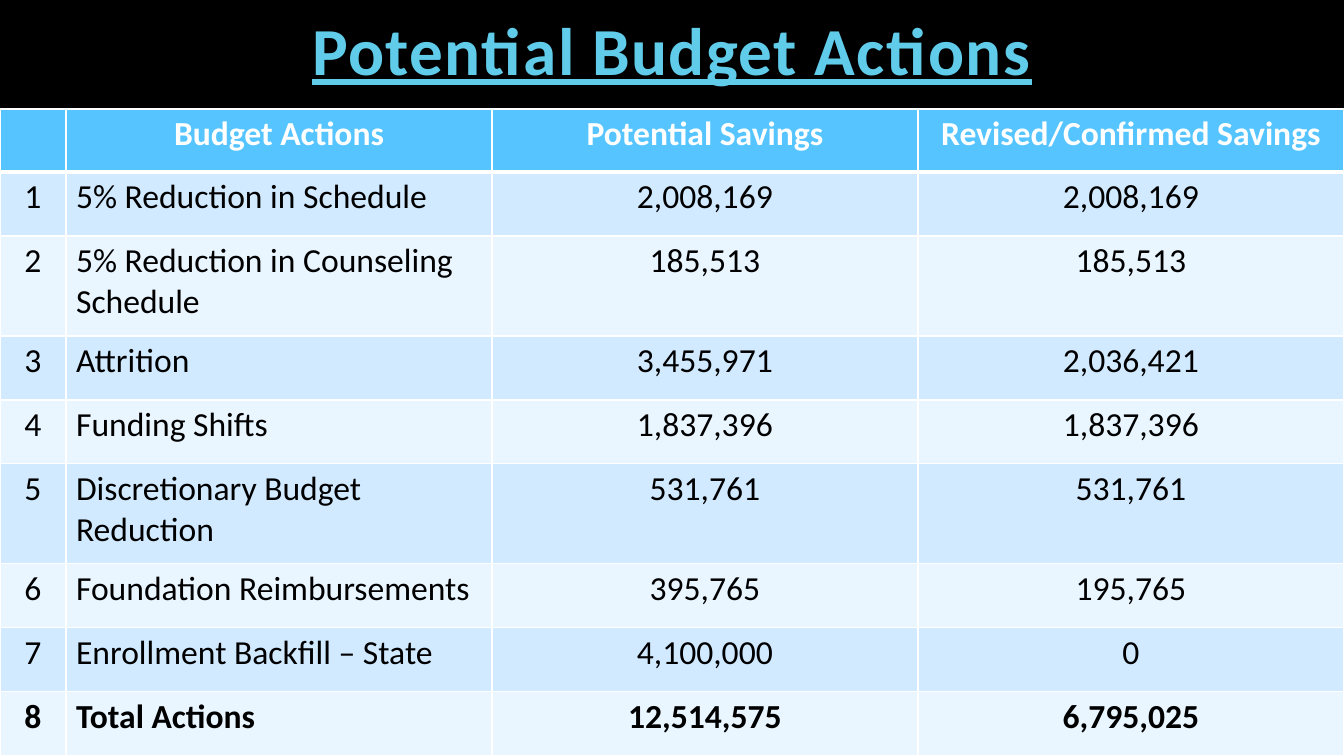
from dataclasses import dataclass

from lxml import etree
from pptx import Presentation
from pptx import util as u
from pptx.dml.color import RGBColor
from pptx.enum import text
from pptx.oxml import ns

SCALE = 12192000 / 1344
MID, LEFT = text.PP_ALIGN.CENTER, text.PP_ALIGN.LEFT


@dataclass(frozen=True)
class Theme:
    """Colours, font and type sizes of the slide."""
    back: str = "000000"
    title: str = "60CCEA"
    head: str = "56C5FF"
    odd: str = "D1EAFF"
    even: str = "E9F5FF"
    ink: str = "000000"
    white: str = "FFFFFF"
    face: str = "Calibri"
    big: int = 48
    body: int = 24


LOOK = Theme()
COLS = [66, 426, 426, 426]
HEAD, LINE, TALL = 63, 64, 100
HEADS = ("", "Budget Actions", "Potential Savings", "Revised/Confirmed Savings")
ACTIONS = [
    ("5% Reduction in Schedule", 2008169, 2008169, LINE),
    ("5% Reduction in Counseling Schedule", 185513, 185513, TALL),
    ("Attrition", 3455971, 2036421, LINE),
    ("Funding Shifts", 1837396, 1837396, LINE),
    ("Discretionary Budget Reduction", 531761, 531761, TALL),
    ("Foundation Reimbursements", 395765, 195765, LINE),
    ("Enrollment Backfill – State", 4100000, 0, LINE),
    ("Total Actions", 12514575, 6795025, LINE),
]


def px(num):
    """Turn pixels into EMU."""
    return u.Emu(round(num * SCALE))


def style(para, size, color, bold, align):
    """Set the font and alignment of a paragraph."""
    para.alignment = align
    font = para.font
    font.name, font.size, font.bold = LOOK.face, u.Pt(size), bold
    font.color.rgb = RGBColor.from_string(color)
    return font


def add_title(slide, words):
    """Add the underlined title, resting on the bottom of its box."""
    frame = slide.shapes.add_textbox(px(109), px(37), px(1126), px(58)).text_frame
    frame.word_wrap = True
    frame.vertical_anchor = text.MSO_ANCHOR.BOTTOM
    para = frame.paragraphs[0]
    para.text = words
    para.line_spacing = 0.9
    font = style(para, LOOK.big, LOOK.title, True, MID)
    font.underline = True
    font._rPr.set("spc", "100")


def edge(cell, side, width):
    """Draw one white side of a cell."""
    props = cell._tc.get_or_add_tcPr()
    line = etree.SubElement(props, ns.qn(f"a:ln{side}"), w=str(u.Pt(width)))
    fill = etree.SubElement(line, ns.qn("a:solidFill"))
    etree.SubElement(fill, ns.qn("a:srgbClr"), val=LOOK.white)


def fill_cell(cell, words, row, col, last):
    """Write one cell with its borders, fill and font."""
    head = row == 0
    thick = {"T": row == 1, "B": head}
    for side in "LRTB":
        edge(cell, side, 3 if thick.get(side) else 1)
    shade = LOOK.head if head else LOOK.odd if row % 2 else LOOK.even
    cell.fill.solid()
    cell.fill.fore_color.rgb = RGBColor.from_string(shade)
    cell.text = words
    color = LOOK.white if head else LOOK.ink
    align = LEFT if col == 1 and not head else MID
    style(cell.text_frame.paragraphs[0], LOOK.body, color, head or row == last, align)


def add_grid(slide, rows, highs):
    """Add the table of budget actions."""
    table = slide.shapes.add_table(len(rows), len(COLS), 0, px(109),
                                   px(sum(COLS)), px(sum(highs))).table
    for col, wide in zip(table.columns, COLS):
        col.width = px(wide)
    for row, (words, high) in enumerate(zip(rows, highs)):
        table.rows[row].height = px(high)
        for col, word in enumerate(words):
            fill_cell(table.cell(row, col), word, row, col, len(rows) - 1)


def main():
    """Build and save the slide."""
    deck = Presentation()
    deck.slide_width, deck.slide_height = px(1344), px(756)
    slide = deck.slides.add_slide(deck.slide_layouts[6])
    back = slide.background.fill
    back.solid()
    back.fore_color.rgb = RGBColor.from_string(LOOK.back)
    rows = [HEADS] + [(str(num), name, f"{plan:,}", f"{sure:,}")
                      for num, (name, plan, sure, _) in enumerate(ACTIONS, 1)]
    add_grid(slide, rows, [HEAD] + [act[3] for act in ACTIONS])
    add_title(slide, "Potential Budget Actions")
    deck.save("out.pptx")


if __name__ == "__main__":
    main()
